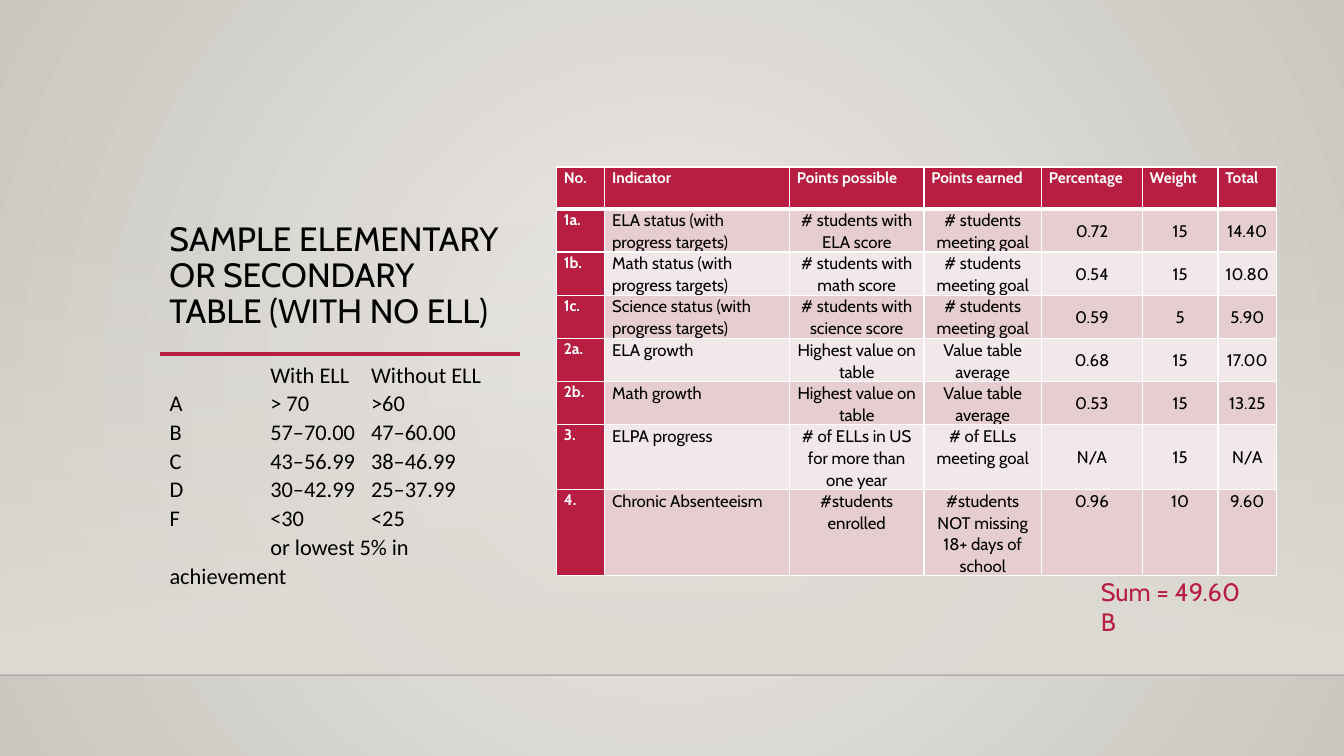
from lxml.etree import SubElement
from pptx import Presentation
from pptx.dml.color import RGBColor
from pptx.enum.shapes import MSO_CONNECTOR, MSO_SHAPE
from pptx.enum.text import MSO_ANCHOR as Anchor, PP_ALIGN as Align
from pptx.oxml import parse_xml
from pptx.oxml.ns import nsdecls, qn
from pptx.util import Pt

PX = 9525  # EMU in one px; the slide is 1280 x 720 px

BLACK = RGBColor(0x00, 0x00, 0x00)
WHITE = RGBColor(0xFF, 0xFF, 0xFF)
CRIMSON = RGBColor(0xB7, 0x1E, 0x42)
ROSE = RGBColor(0xE6, 0xCD, 0xCF)
PALE_ROSE = RGBColor(0xF3, 0xE8, 0xE9)
PAPER = RGBColor(0xEC, 0xEA, 0xE7)
STONE = RGBColor(0xCA, 0xC7, 0xC1)
SAND = RGBColor(0xDF, 0xDB, 0xD5)

TITLE_FONT = {"name": "Cabin", "size": Pt(24)}
SCALE_FONT = {"name": "Calibri", "size": Pt(16)}
SUM_FONT = {"name": "Cabin", "size": Pt(18)}
LABEL_FONT = {"name": "Cabin", "size": Pt(11), "bold": True}
CELL_FONT = {"name": "Cabin", "size": Pt(12), "bold": False}

TAB_STOPS = (96, 192)
GRADE_SCALE = [
    "\tWith ELL\tWithout ELL",
    "A\t> 70\t>60",
    "B\t57–70.00\t47–60.00",
    "C\t43–56.99\t38–46.99",
    "D\t30–42.99\t25–37.99",
    "F\t<30\t<25",
    "\tor lowest 5% in achievement",
]

COLUMN_WIDTHS = (46, 176, 128, 112, 96, 72, 56)
ROW_HEIGHTS = (40,) * 6 + (60, 80)
INDICATORS = [
    ("No.", "Indicator", "Points possible", "Points earned", "Percentage", "Weight", "Total"),
    ("1a.", "ELA status (with progress targets)", "# students with ELA score",
     "# students meeting goal", "0.72", "15", "14.40"),
    ("1b.", "Math status (with progress targets)", "# students with math score",
     "# students meeting goal", "0.54", "15", "10.80"),
    ("1c.", "Science status (with progress targets)", "# students with science score",
     "# students meeting goal", "0.59", "5", "5.90"),
    ("2a.", "ELA growth", "Highest value on table", "Value table average", "0.68", "15", "17.00"),
    ("2b.", "Math growth", "Highest value on table", "Value table average", "0.53", "15", "13.25"),
    ("3.", "ELPA progress", "# of ELLs in US for more than one year",
     "# of ELLs meeting goal", "N/A", "15", "N/A"),
    ("4.", "Chronic Absenteeism", "#students enrolled",
     "#students NOT missing 18+ days of school", "0.96", "10", "9.60"),
]


def px(*lengths):
    return [length * PX for length in lengths]


def apply_format(target, values):
    for name, value in values.items():
        setattr(target, name, value)


def write_run(paragraph, text, font, color):
    run = paragraph.add_run()
    run.text = text
    apply_format(run.font, font)
    run.font.color.rgb = color


def set_alpha(color_element, percent):
    SubElement(color_element, qn("a:alpha"), val=str(percent * 1000))


def set_gradient(fill, colors):
    fill.gradient()
    for stop, color in zip(fill.gradient_stops, colors):
        stop.color.rgb = color


def paint_background(slide):
    set_gradient(slide.background.fill, (PAPER, STONE))
    gradient = slide.element.xpath(".//p:bgPr/a:gradFill")[0]
    for linear in gradient.findall(qn("a:lin")):
        gradient.remove(linear)
    gradient.append(parse_xml(
        f'<a:path {nsdecls("a")} path="circle">'
        '<a:fillToRect l="50000" t="50000" r="50000" b="50000"/></a:path>'))


def add_wall(slide):
    wall = slide.shapes.add_shape(MSO_SHAPE.RECTANGLE, *px(0, 212, 1280, 431))
    wall.shadow.inherit = False
    wall.line.fill.background()
    set_gradient(wall.fill, (SAND, SAND))
    wall.fill.gradient_angle = 270
    set_alpha(wall.element.xpath(".//a:gs/a:srgbClr")[0], 0)


def add_rule(slide, left, right, y, color, width, alpha=None):
    rule = slide.shapes.add_connector(MSO_CONNECTOR.STRAIGHT, *px(left, y, right, y))
    rule.line.color.rgb = color
    rule.line.width = Pt(width)
    if alpha is not None:
        set_alpha(rule.element.xpath(".//a:ln//a:srgbClr")[0], alpha)
    SubElement(rule.element.spPr, qn("a:effectLst"))


def add_text(slide, box, lines, font, color, spacing=1.0, anchor=Anchor.TOP, tabs=()):
    frame = slide.shapes.add_textbox(*px(*box)).text_frame
    apply_format(frame, {"word_wrap": True, "vertical_anchor": anchor})
    for index, line in enumerate(lines):
        paragraph = frame.add_paragraph() if index else frame.paragraphs[0]
        paragraph.line_spacing = spacing
        if tabs:
            tab_list = SubElement(paragraph._p.get_or_add_pPr(), qn("a:tabLst"))
            for position in tabs:
                SubElement(tab_list, qn("a:tab"), pos=str(position * PX), algn="l")
        write_run(paragraph, line, font, color)


def set_borders(cell, top, bottom):
    properties = cell._tc.get_or_add_tcPr()
    sides = {"lnL": 1, "lnR": 1, "lnT": top, "lnB": bottom}
    for index, (side, width) in enumerate(sides.items()):
        properties.insert(index, parse_xml(
            f'<a:{side} {nsdecls("a")} w="{Pt(width)}"><a:solidFill>'
            f'<a:srgbClr val="{WHITE}"/></a:solidFill></a:{side}>'))


def fill_cell(cell, text, row, column):
    is_label = row == 0 or column == 0
    is_last = row == len(INDICATORS) - 1
    centered = not is_label and column >= 2
    middle = not is_label and column >= 4 and not is_last
    apply_format(cell, {
        "margin_left": 7 * PX, "margin_right": 7 * PX, "margin_top": 0, "margin_bottom": 0,
        "vertical_anchor": Anchor.MIDDLE if middle else Anchor.TOP,
    })
    cell.fill.solid()
    cell.fill.fore_color.rgb = CRIMSON if is_label else (ROSE if row % 2 else PALE_ROSE)
    set_borders(cell, top=3 if row == 1 else 1, bottom=3 if row == 0 else 1)
    paragraph = cell.text_frame.paragraphs[0]
    apply_format(paragraph, {"alignment": Align.CENTER if centered else Align.LEFT,
                             "line_spacing": 1.07})
    write_run(paragraph, text, LABEL_FONT if is_label else CELL_FONT,
              WHITE if is_label else BLACK)


def add_indicator_table(slide, left, top):
    table = slide.shapes.add_table(
        len(ROW_HEIGHTS), len(COLUMN_WIDTHS),
        *px(left, top, sum(COLUMN_WIDTHS), sum(ROW_HEIGHTS))).table
    for column, width in zip(table.columns, COLUMN_WIDTHS):
        column.width = width * PX
    for row, height in zip(table.rows, ROW_HEIGHTS):
        row.height = height * PX
    for row, texts in enumerate(INDICATORS):
        for column, text in enumerate(texts):
            fill_cell(table.cell(row, column), text, row, column)


def main():
    presentation = Presentation()
    presentation.slide_width, presentation.slide_height = px(1280, 720)
    slide = presentation.slides.add_slide(presentation.slide_layouts[6])

    # Backdrop
    paint_background(slide)
    add_wall(slide)
    add_rule(slide, 0, 1280, 643, BLACK, 1, alpha=20)

    # Title and grade scale
    add_rule(slide, 152, 495, 337, CRIMSON, 2.5)
    add_text(slide, (152, 84, 344, 236), ["SAMPLE ELEMENTARY OR SECONDARY TABLE (WITH NO ELL)"],
             TITLE_FONT, BLACK, spacing=0.9, anchor=Anchor.BOTTOM)
    add_text(slide, (152, 337, 360, 236), GRADE_SCALE, SCALE_FONT, BLACK,
             spacing=1.07, tabs=TAB_STOPS)

    # Indicators and their sum
    add_indicator_table(slide, 530, 159)
    add_text(slide, (1039, 544, 177, 39), ["Sum = 49.60", "B"], SUM_FONT, CRIMSON)

    presentation.save("out.pptx")


if __name__ == "__main__":
    main()
